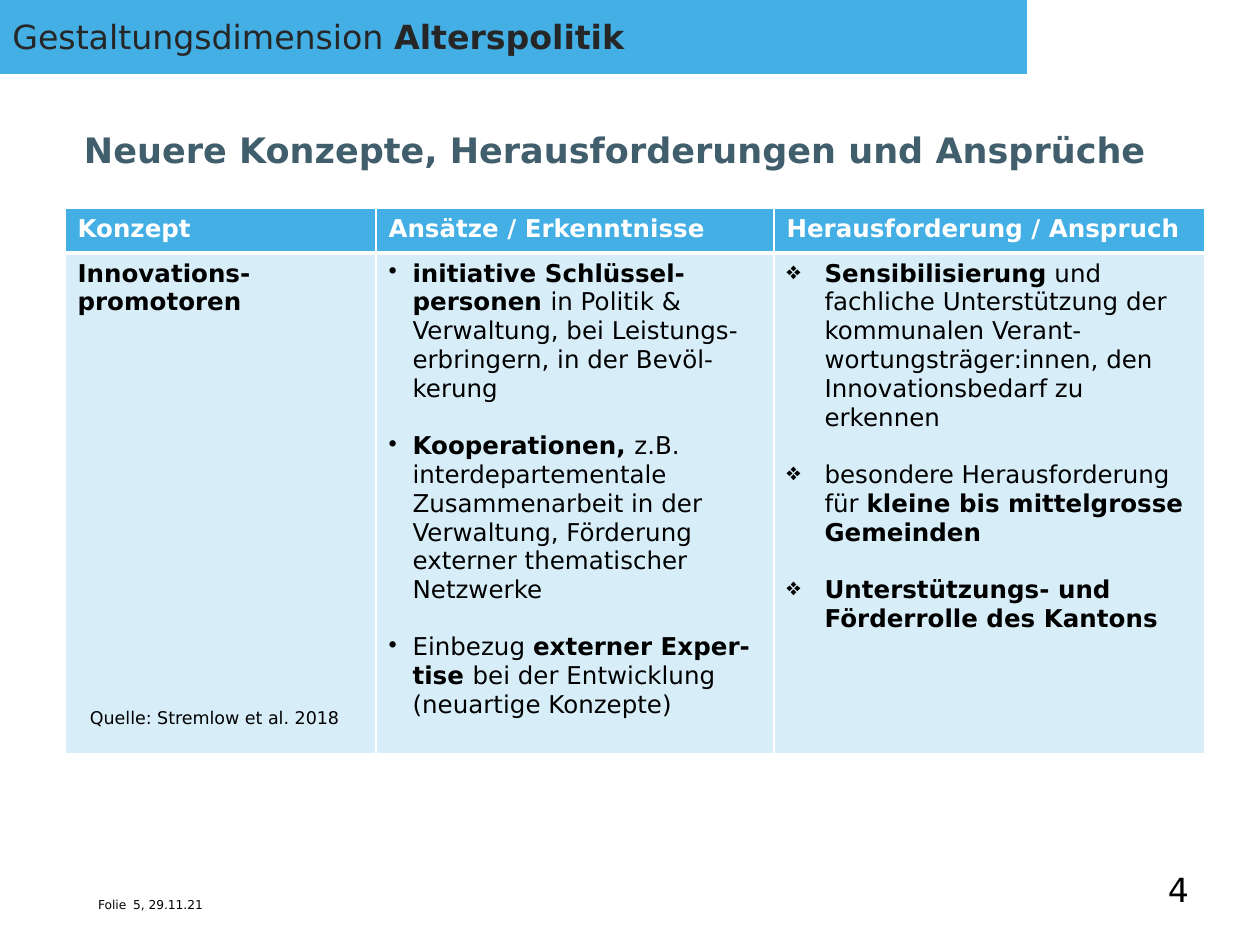
from dataclasses import dataclass

import pptx
import pptx.dml.color
import pptx.enum.shapes
import pptx.enum.text
import pptx.oxml
import pptx.oxml.ns
import pptx.util

EMU_PER_PX = 914400 / 126
ANCHOR = pptx.enum.text.MSO_ANCHOR


@dataclass(frozen=True)
class Theme:
    font: str = "DejaVu Sans"
    blue: str = "43AFE5"
    pale: str = "D7EEF9"
    slate: str = "415E6C"
    charcoal: str = "262626"
    black: str = "000000"
    white: str = "FFFFFF"
    title: int = 20
    banner: int = 19
    table: int = 14
    source: int = 10
    footer: int = 7
    item_gap: float = 16.4


THEME = Theme()


@dataclass(frozen=True)
class Run:
    text: str
    bold: bool = False


@dataclass(frozen=True)
class Label:
    left: int
    top: int
    width: int
    height: int
    text: str
    size: int
    color: str = THEME.black
    bold: bool = False
    inset: tuple[int, int] = (13, 6)
    anchor: ANCHOR = ANCHOR.TOP
    wrap: bool = True


@dataclass(frozen=True)
class Column:
    width: int
    heading: str
    items: tuple[tuple[Run, ...], ...]
    bullet: str = ""
    indent: int = 0


LABELS = (
    Label(88, 890, 373, 38, "Folie", THEME.footer, inset=(10, 10)),
    Label(74, 106, 1171, 75, "Neuere Konzepte, Herausforderungen und Ansprüche",
          THEME.title, THEME.slate, True, (10, 10), ANCHOR.BOTTOM),
    Label(123, 890, 1118, 55, "5, 29.11.21", THEME.footer, inset=(10, 10)),
    Label(77, 701, 281, 34, "Quelle: Stremlow et al. 2018", THEME.source),
    Label(1155, 863, 47, 53, "4", THEME.banner, wrap=False),
)

BANNER = (Run("Gestaltungsdimension "), Run("Alterspolitik", True))

COLUMNS = (
    Column(311, "Konzept", ((Run("Innovations-promotoren", True),),)),
    Column(398, "Ansätze / Erkenntnisse", (
        (Run("initiative Schlüssel-personen ", True),
         Run("in Politik & Verwaltung, bei Leistungs-erbringern, in der Bevöl-kerung")),
        (Run("Kooperationen, ", True),
         Run("z.B.\ninterdepartementale Zusammenarbeit in der Verwaltung, "
             "Förderung externer thematischer Netzwerke")),
        (Run("Einbezug "), Run("externer Exper-tise ", True),
         Run("bei der Entwicklung (neuartige Konzepte)")),
    ), "•", 24),
    Column(431, "Herausforderung / Anspruch", (
        (Run("Sensibilisierung", True),
         Run(" und fachliche Unterstützung der kommunalen "
             "Verant-wortungsträger:innen, den Innovationsbedarf zu erkennen")),
        (Run("besondere Herausforderung für "),
         Run("kleine bis mittelgrosse Gemeinden", True)),
        (Run("Unterstützungs- und Förderrolle des Kantons", True),),
    ), "❖", 38),
)
ROW_HEIGHTS = (45, 501)


def px(value: int) -> int:
    return round(value * EMU_PER_PX)


def rgb(color: str) -> pptx.dml.color.RGBColor:
    return pptx.dml.color.RGBColor.from_string(color)


def xml_element(tag: str, attributes: str, content: str = ""):
    namespace = pptx.oxml.ns.nsdecls("a")
    return pptx.oxml.parse_xml(f"<a:{tag} {namespace} {attributes}>{content}</a:{tag}>")


def add_runs(paragraph, runs: tuple[Run, ...], size: int, color: str) -> None:
    """Add styled runs; a newline in a run becomes a line break."""
    for item in runs:
        for index, line in enumerate(item.text.split("\n")):
            if index:
                paragraph.add_line_break()
            run = paragraph.add_run()
            run.text = line
            run.font.name = THEME.font
            run.font.size = pptx.util.Pt(size)
            run.font.bold = item.bold
            run.font.color.rgb = rgb(color)


def add_label(slide, label: Label) -> None:
    box = slide.shapes.add_textbox(
        px(label.left), px(label.top), px(label.width), px(label.height))
    frame = box.text_frame
    frame.word_wrap = label.wrap
    frame.vertical_anchor = label.anchor
    frame.margin_left = frame.margin_right = px(label.inset[0])
    frame.margin_top = frame.margin_bottom = px(label.inset[1])
    add_runs(frame.paragraphs[0], (Run(label.text, label.bold),), label.size, label.color)


def add_banner(slide) -> None:
    shape = slide.shapes.add_shape(
        pptx.enum.shapes.MSO_SHAPE.RECTANGLE, 0, px(-1), px(1027), px(75))
    shape.shadow.inherit = False
    shape.fill.solid()
    shape.fill.fore_color.rgb = rgb(THEME.blue)
    shape.line.fill.background()
    frame = shape.text_frame
    frame.word_wrap = True
    frame.vertical_anchor = ANCHOR.MIDDLE
    paragraph = frame.paragraphs[0]
    paragraph.alignment = pptx.enum.text.PP_ALIGN.LEFT
    add_runs(paragraph, BANNER, THEME.banner, THEME.charcoal)


def style_cell(cell, fill: str, top: int, bottom: int) -> None:
    """Fill a cell and give it white borders, with widths in points."""
    cell.fill.solid()
    cell.fill.fore_color.rgb = rgb(fill)
    properties = cell._tc.get_or_add_tcPr()
    line_fill = f'<a:solidFill><a:srgbClr val="{THEME.white}"/></a:solidFill>'
    borders = (("lnL", 1), ("lnR", 1), ("lnT", top), ("lnB", bottom))
    for index, (tag, width) in enumerate(borders):
        line = xml_element(tag, f'w="{pptx.util.Pt(width)}"', line_fill)
        properties.insert(index, line)


def add_items(cell, column: Column) -> None:
    frame = cell.text_frame
    for index, runs in enumerate(column.items):
        paragraph = frame.add_paragraph() if index else frame.paragraphs[0]
        if column.bullet:
            properties = paragraph._p.get_or_add_pPr()
            properties.set("marL", str(px(column.indent)))
            properties.set("indent", str(-px(column.indent)))
            properties.append(xml_element("buChar", f'char="{column.bullet}"'))
        if index:
            paragraph.space_before = pptx.util.Pt(THEME.item_gap)
        add_runs(paragraph, runs, THEME.table, THEME.black)


def add_concept_table(slide) -> None:
    width = sum(column.width for column in COLUMNS)
    table = slide.shapes.add_table(
        len(ROW_HEIGHTS), len(COLUMNS),
        px(65), px(208), px(width), px(sum(ROW_HEIGHTS))).table
    table.horz_banding = False
    for row, height in zip(table.rows, ROW_HEIGHTS):
        row.height = px(height)
    for index, column in enumerate(COLUMNS):
        table.columns[index].width = px(column.width)
        header, body = table.cell(0, index), table.cell(1, index)
        style_cell(header, THEME.blue, 1, 3)
        style_cell(body, THEME.pale, 3, 1)
        add_runs(header.text_frame.paragraphs[0], (Run(column.heading, True),),
                 THEME.table, THEME.white)
        add_items(body, column)


def main() -> None:
    presentation = pptx.Presentation()
    presentation.slide_width = px(1260)
    presentation.slide_height = px(945)
    slide = presentation.slides.add_slide(presentation.slide_layouts[6])
    add_concept_table(slide)
    add_banner(slide)
    for label in LABELS:
        add_label(slide, label)
    presentation.save("out.pptx")


if __name__ == "__main__":
    main()
